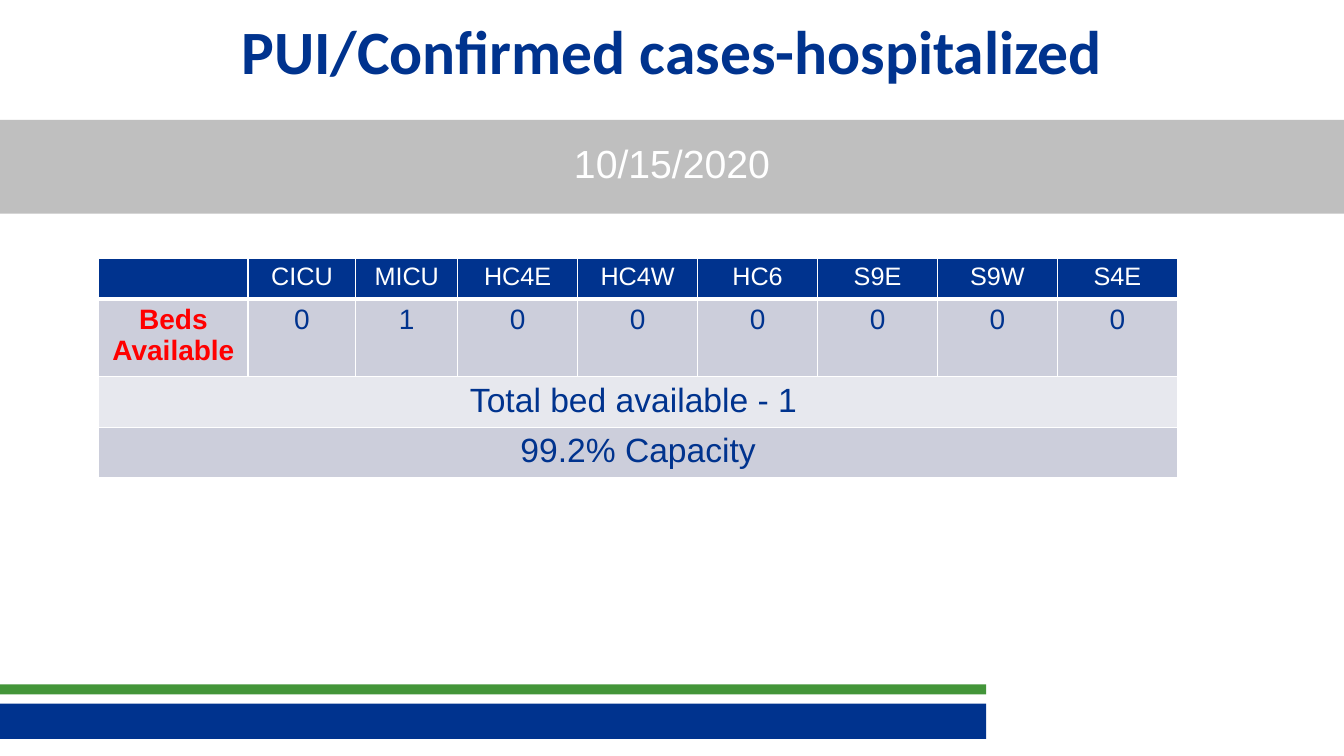
from dataclasses import dataclass

from lxml.etree import SubElement
from pptx import Presentation
from pptx.dml.color import RGBColor
from pptx.enum.shapes import MSO_SHAPE
from pptx.enum.text import MSO_ANCHOR, PP_ALIGN
from pptx.oxml.ns import qn
from pptx.util import Inches, Pt

NAVY = "00338E"
GREEN = "439539"
GREY = "BFBFBF"
WHITE = "FFFFFF"
RED = "FF0000"
BAND_DARK = "CCCEDB"
BAND_LIGHT = "E7E8EE"


@dataclass
class Bar:
    left: float
    top: float
    width: float
    height: float
    color: str
    text: str = ""


@dataclass
class TableRow:
    height: float
    texts: list[str]
    size: int
    color: str
    fill: str
    merged: bool = False
    bottom_border: int = 1


BARS = [
    Bar(-0.03, 6.98, 9.81, 0.35, NAVY),
    Bar(-0.03, 6.79, 9.81, 0.1, GREEN),
    Bar(0, 1.34, 13.33, 0.78, GREY),
    Bar(0, 1.19, 13.33, 0.85, GREY, "10/15/2020"),
]
UNITS = ["CICU", "MICU", "HC4E", "HC4W", "HC6", "S9E", "S9W", "S4E"]
BEDS = ["0", "1", "0", "0", "0", "0", "0", "0"]
COLUMN_WIDTHS = [1.48, 1.07, 1.01] + [1.19] * 6
ROWS = [
    TableRow(0.41, [""] + UNITS, 18, WHITE, NAVY, bottom_border=3),
    TableRow(0.72, ["Beds\nAvailable"] + BEDS, 20, NAVY, BAND_DARK),
    TableRow(0.47, ["Total bed available - 1 "], 24, NAVY, BAND_LIGHT, merged=True),
    TableRow(0.47, ["99.2% Capacity"], 24, NAVY, BAND_DARK, merged=True),
]


def rgb(value: str) -> RGBColor:
    return RGBColor.from_string(value)


def write_text(frame, text: str, *, size: int, color: str, font: str = "Arial", bold: bool = False) -> None:
    for index, line in enumerate(text.split("\n")):
        para = frame.add_paragraph() if index else frame.paragraphs[0]
        para.alignment = PP_ALIGN.CENTER
        para.font.size = Pt(size)
        span = para.add_run()
        span.text = line
        span.font.name = font
        span.font.size = Pt(size)
        span.font.bold = bold
        span.font.color.rgb = rgb(color)


def draw_bar(page, bar: Bar) -> None:
    shape = page.shapes.add_shape(
        MSO_SHAPE.RECTANGLE, Inches(bar.left), Inches(bar.top), Inches(bar.width), Inches(bar.height)
    )
    shape.shadow.inherit = False
    shape.fill.solid()
    shape.fill.fore_color.rgb = rgb(bar.color)
    shape.line.fill.background()
    if bar.text:
        shape.text_frame.vertical_anchor = MSO_ANCHOR.MIDDLE
        write_text(shape.text_frame, bar.text, size=28, color=WHITE)


def draw_title(page) -> None:
    box = page.shapes.add_textbox(Inches(1.32), Inches(0.08), Inches(10.7), Inches(1.65))
    box.text_frame.word_wrap = True
    write_text(box.text_frame, "PUI/Confirmed cases-hospitalized", size=44, color=NAVY, font="Calibri", bold=True)


def set_borders(cell, bottom: int) -> None:
    properties = cell._tc.get_or_add_tcPr()
    for side, width in {"lnL": 1, "lnR": 1, "lnT": 1, "lnB": bottom}.items():
        line = SubElement(properties, qn(f"a:{side}"), w=str(Pt(width)))
        fill = SubElement(line, qn("a:solidFill"))
        SubElement(fill, qn("a:srgbClr"), val=WHITE)


def draw_table(page) -> None:
    table = page.shapes.add_table(
        len(ROWS),
        len(COLUMN_WIDTHS),
        Inches(0.98),
        Inches(2.56),
        Inches(sum(COLUMN_WIDTHS)),
        Inches(sum(row.height for row in ROWS)),
    ).table
    for column, width in zip(table.columns, COLUMN_WIDTHS):
        column.width = Inches(width)
    for row_index, row in enumerate(ROWS):
        table.rows[row_index].height = Inches(row.height)
        for column_index in range(len(COLUMN_WIDTHS)):
            cell = table.cell(row_index, column_index)
            set_borders(cell, row.bottom_border)
            cell.fill.solid()
            cell.fill.fore_color.rgb = rgb(row.fill)
        if row.merged:
            table.cell(row_index, 0).merge(table.cell(row_index, len(COLUMN_WIDTHS) - 1))
        for column_index, text in enumerate(row.texts):
            is_label = column_index == 0 and not row.merged
            write_text(
                table.cell(row_index, column_index).text_frame,
                text,
                size=row.size,
                color=RED if is_label else row.color,
                bold=is_label,
            )


def main() -> None:
    deck = Presentation()
    deck.slide_width = Inches(13.33)
    deck.slide_height = Inches(7.5)
    page = deck.slides.add_slide(deck.slide_layouts[6])
    for bar in BARS:
        draw_bar(page, bar)
    draw_title(page)
    draw_table(page)
    deck.save("out.pptx")


if __name__ == "__main__":
    main()
